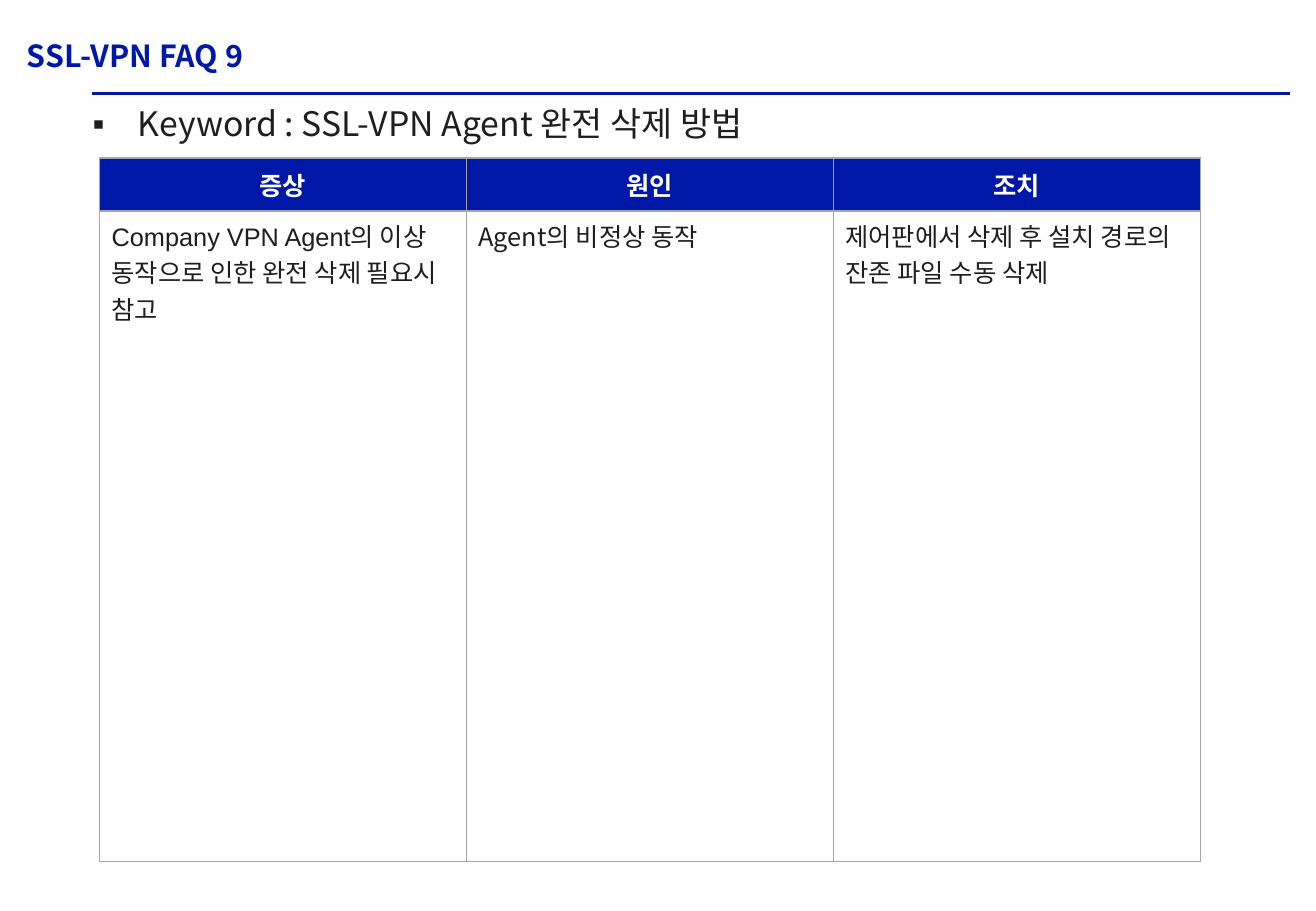
from dataclasses import dataclass

from lxml.etree import SubElement
from pptx import Presentation
from pptx.dml.color import RGBColor
from pptx.enum.shapes import MSO_CONNECTOR
from pptx.enum.text import MSO_ANCHOR, MSO_AUTO_SIZE, PP_ALIGN
from pptx.oxml.ns import qn
from pptx.util import Cm, Pt

COLORS = {"blue": "0018A8", "ink": "1E1E1E", "white": "FFFFFF", "border": "A6A6A6"}
SANS = "Noto Sans CJK KR"
LATIN = "Arial"


@dataclass
class Style:
    size: float
    color: str
    font: str = SANS
    bold: bool = False


@dataclass
class Column:
    heading: str
    content: str
    font: str


COLUMNS = [
    Column("증상", "Company VPN Agent의 이상 동작으로 인한 완전 삭제 필요시 참고", LATIN),
    Column("원인", "Agent의 비정상 동작", SANS),
    Column("조치", "제어판에서 삭제 후 설치 경로의 잔존 파일 수동 삭제", SANS),
]
COLUMN_WIDTH = 7.67
ROW_HEIGHTS = [1.11, 13.61]


def rgb(name: str) -> RGBColor:
    return RGBColor.from_string(COLORS[name])


def add_span(para, text: str, style: Style) -> None:
    span = para.add_run()
    span.text = text
    span.font.size = Pt(style.size)
    span.font.bold = style.bold
    span.font.name = style.font
    span.font.color.rgb = rgb(style.color)
    SubElement(span.font._element, qn("a:ea"), typeface=SANS)


def place(box, left: float, top: float, width: float, height: float) -> None:
    box.left, box.top = Cm(left), Cm(top)
    box.width, box.height = Cm(width), Cm(height)


def add_title(page) -> None:
    box = page.shapes.title
    place(box, 0.56, 0, 26.44, 2.31)
    frame = box.text_frame
    frame.margin_left = frame.margin_right = frame.margin_top = frame.margin_bottom = 0
    frame.vertical_anchor = MSO_ANCHOR.MIDDLE
    frame.auto_size = MSO_AUTO_SIZE.NONE
    para = frame.paragraphs[0]
    para.alignment = PP_ALIGN.LEFT
    add_span(para, "SSL-VPN FAQ 9", Style(18, "blue", bold=True))


def add_keyword(page) -> None:
    box = page.placeholders[1]
    place(box, 1.68, 2.03, 14.91, 1.12)
    frame = box.text_frame
    frame.word_wrap = False
    frame.auto_size = MSO_AUTO_SIZE.SHAPE_TO_FIT_TEXT
    para = frame.paragraphs[0]
    properties = para._p.get_or_add_pPr()
    properties.set("marL", str(Cm(0.95)))
    properties.set("indent", str(-Cm(0.95)))
    SubElement(properties, qn("a:buFont"), typeface=LATIN)
    SubElement(properties, qn("a:buChar"), char="▪")
    para.space_before = Pt(0)
    add_span(para, "Keyword : SSL-VPN Agent 완전 삭제 방법", Style(20, "ink"))


def add_rule(page) -> None:
    rule = page.shapes.add_connector(
        MSO_CONNECTOR.STRAIGHT, Cm(1.93), Cm(1.96), Cm(26.97), Cm(1.96)
    )
    rule.line.color.rgb = rgb("blue")
    rule.line.width = Pt(1.5)
    SubElement(rule._element.spPr, qn("a:effectLst"))


def add_borders(cell) -> None:
    properties = cell._tc.get_or_add_tcPr()
    for side in ("lnL", "lnR", "lnT", "lnB"):
        line = SubElement(properties, qn(f"a:{side}"), w=str(Pt(1)))
        fill = SubElement(line, qn("a:solidFill"))
        SubElement(fill, qn("a:srgbClr"), val=COLORS["border"])


def add_faq_table(page) -> None:
    table = page.shapes.add_table(
        len(ROW_HEIGHTS), len(COLUMNS), Cm(2.08), Cm(3.3),
        Cm(COLUMN_WIDTH * len(COLUMNS)), Cm(sum(ROW_HEIGHTS)),
    ).table
    table.horz_banding = False
    for row, height in zip(table.rows, ROW_HEIGHTS):
        row.height = Cm(height)
    for index, column in enumerate(COLUMNS):
        table.columns[index].width = Cm(COLUMN_WIDTH)
        heading, content = table.cell(0, index), table.cell(1, index)
        for cell in (heading, content):
            add_borders(cell)
        heading.fill.solid()
        heading.fill.fore_color.rgb = rgb("blue")
        heading.vertical_anchor = MSO_ANCHOR.MIDDLE
        para = heading.text_frame.paragraphs[0]
        para.alignment = PP_ALIGN.CENTER
        add_span(para, column.heading, Style(15, "white", LATIN, True))
        content.fill.background()
        add_span(content.text_frame.paragraphs[0], column.content,
                 Style(15, "ink", column.font))


def main() -> None:
    deck = Presentation()
    deck.slide_width, deck.slide_height = Cm(27.51), Cm(19.05)
    page = deck.slides.add_slide(deck.slide_layouts[1])
    add_rule(page)
    add_faq_table(page)
    add_keyword(page)
    add_title(page)
    deck.save("out.pptx")


if __name__ == "__main__":
    main()
